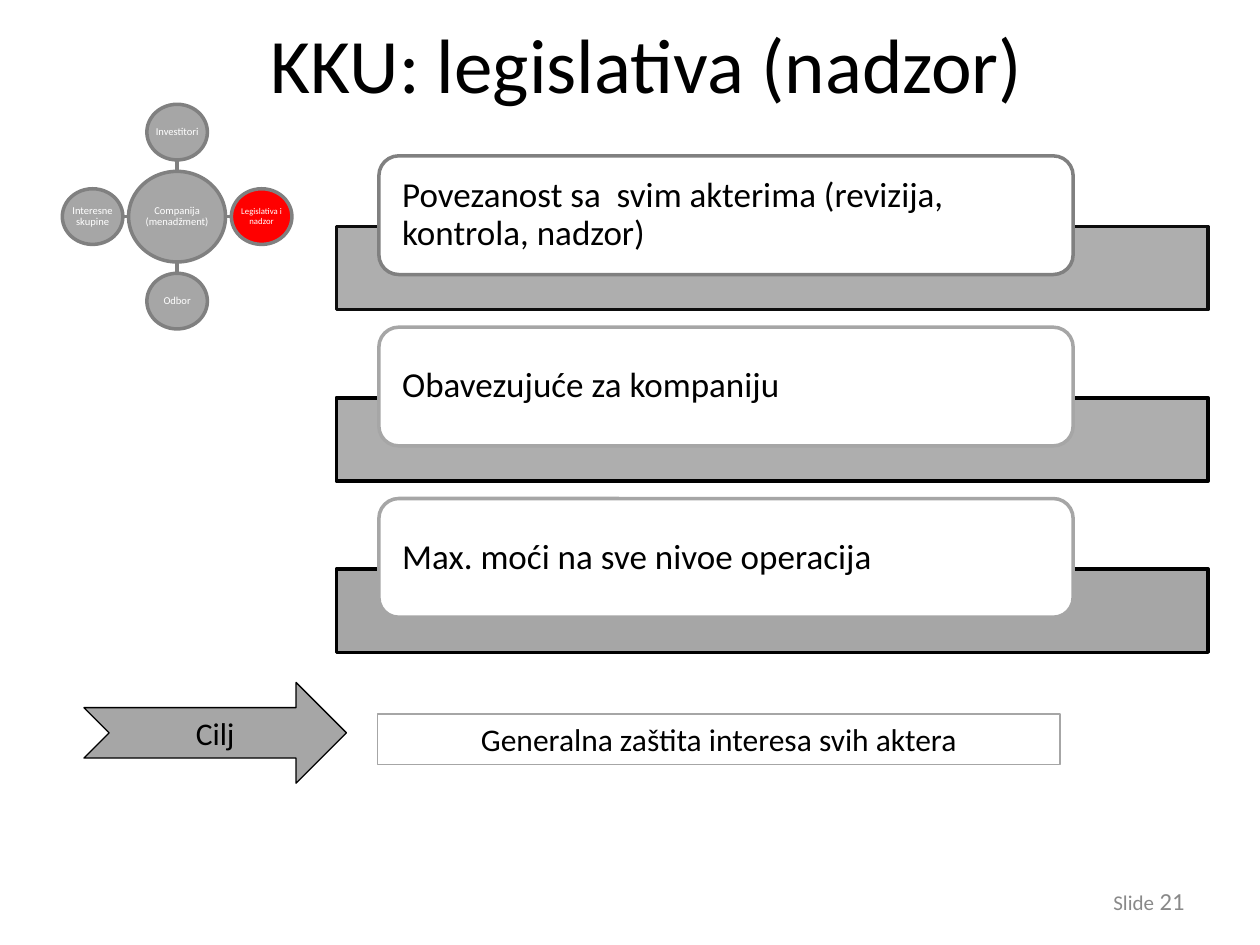
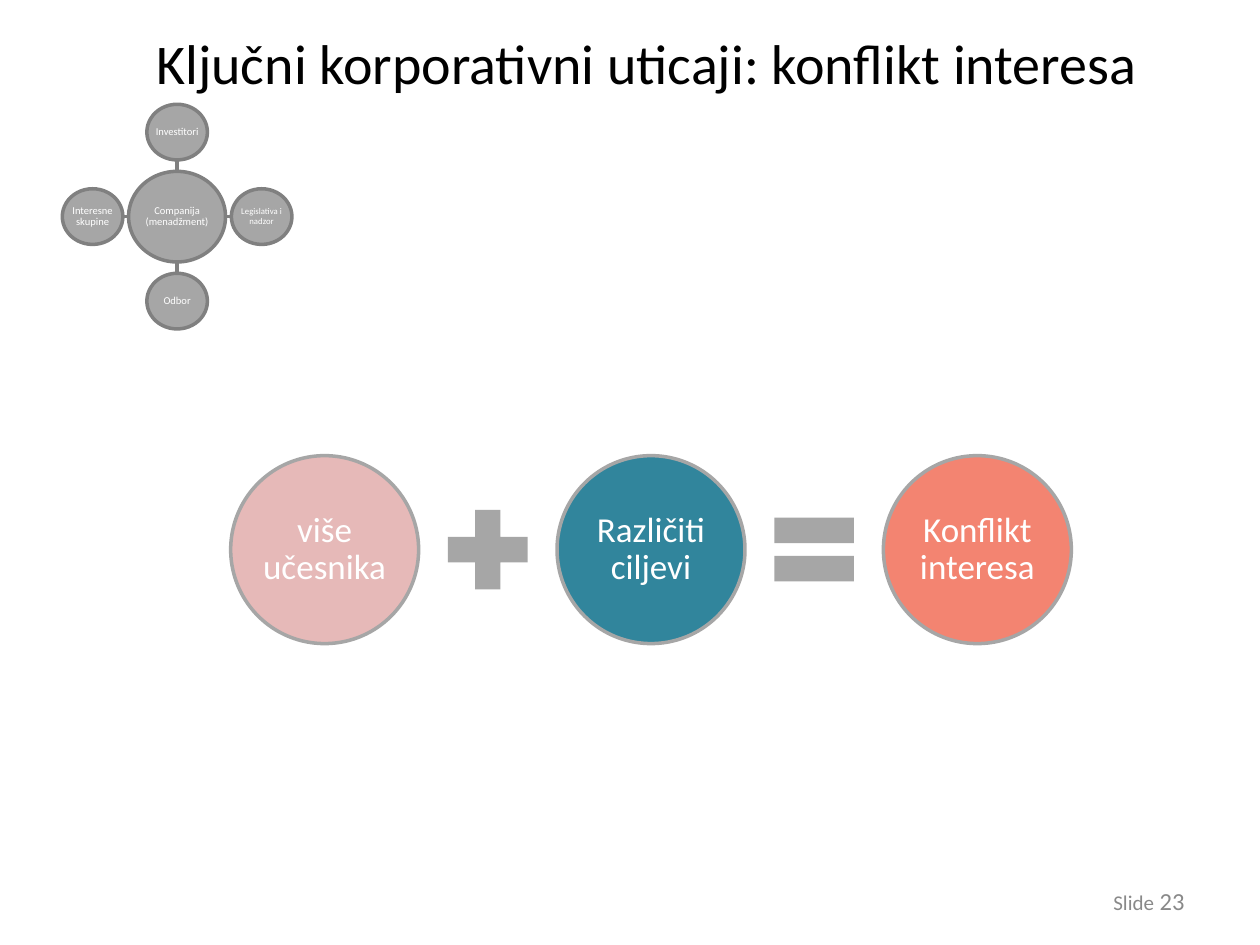
from dataclasses import dataclass
from typing import Optional

import pptx
import pptx.dml.color
import pptx.enum.shapes
import pptx.enum.text
import pptx.oxml.ns
import pptx.util
from lxml import etree

Pt = pptx.util.Pt
RGBColor = pptx.dml.color.RGBColor
Preset = pptx.enum.shapes.MSO_SHAPE
Align = pptx.enum.text.PP_ALIGN
Anchor = pptx.enum.text.MSO_ANCHOR
qn = pptx.oxml.ns.qn

FONT = "Calibri"
BLACK = RGBColor(0x00, 0x00, 0x00)
NEAR_BLACK = RGBColor(0x0D, 0x0D, 0x0D)
WHITE = RGBColor(0xFF, 0xFF, 0xFF)
GREY = RGBColor(0xA6, 0xA6, 0xA6)
DARK_GREY = RGBColor(0x80, 0x80, 0x80)
FOOTER_GREY = RGBColor(0x89, 0x89, 0x89)
RED = RGBColor(0xFF, 0x00, 0x00)
PINK = RGBColor(0xE6, 0xB9, 0xB8)
TEAL = RGBColor(0x31, 0x85, 0x9C)
CORAL = RGBColor(0xF3, 0x84, 0x71)


@dataclass(frozen=True)
class Area:
    left: float
    top: float
    width: float
    height: float

    def lengths(self) -> list:
        return [Pt(value) for value in (self.left, self.top, self.width, self.height)]


@dataclass(frozen=True)
class TextStyle:
    size: float
    color: RGBColor = BLACK
    align: Align = Align.CENTER
    line_spacing: float = 1.0
    side_inset: float = 0


@dataclass(frozen=True)
class Stakeholder:
    name: str
    step_x: int
    step_y: int
    size: float = 6


@dataclass(frozen=True)
class Statement:
    text: str
    bar_line: RGBColor
    card_line: RGBColor
    bar_opacity: int


@dataclass(frozen=True)
class Term:
    text: str
    fill: RGBColor


TITLE_AREA = Area(19.4, 0, 700.6, 71.3)
FOOTER_AREA = Area(516.2, 500.4, 167.8, 28.8)

HUB_X, HUB_Y = 101.2, 123.8
HUB_WIDTH, HUB_HEIGHT = 55.4, 51.8
NODE_WIDTH, NODE_HEIGHT = 34.6, 31.8
NODE_DISTANCE = 48.3
STAKEHOLDERS = [
    Stakeholder("Investitori", 0, -1),
    Stakeholder("Legislativa i nadzor", 1, 0, size=5),
    Stakeholder("Odbor", 0, 1),
    Stakeholder("Interesne skupine", -1, 0),
]

FIRST_BAR = Area(192.2, 129.4, 498.2, 47.6)
FIRST_CARD = Area(216.5, 89.1, 396.7, 67.8)
STATEMENT_PITCH = 97.9
STATEMENTS = [
    Statement("Povezanost sa  svim akterima (revizija, kontrola, nadzor)", NEAR_BLACK, DARK_GREY, 90),
    Statement("Obavezujuće za kompaniju", BLACK, GREY, 90),
    Statement("Max. moći na sve nivoe operacija", BLACK, GREY, 100),
]

FIRST_TERM = Area(131.8, 260.4, 107.4, 107.4)
TERM_PITCH = 186.5
OPERATOR_SIZE = 61.9
TERMS = [
    Term("više učesnika", PINK),
    Term("Različiti ciljevi", TEAL),
    Term("Konflikt interesa", CORAL),
]
OPERATORS = [Preset.MATH_PLUS, Preset.MATH_EQUAL]


def style_run(span, size: float, color: RGBColor) -> None:
    span.font.name = FONT
    span.font.size = Pt(size)
    span.font.color.rgb = color


def write_text(box, text: str, style: TextStyle) -> None:
    """Centre the text vertically; a single word never breaks."""
    frame = box.text_frame
    frame.text = text
    frame.word_wrap = " " in text
    frame.vertical_anchor = Anchor.MIDDLE
    frame.margin_left = frame.margin_right = Pt(style.side_inset)
    frame.margin_top = frame.margin_bottom = Pt(0)
    para = frame.paragraphs[0]
    para.alignment = style.align
    para.line_spacing = style.line_spacing
    for span in para.runs:
        style_run(span, style.size, style.color)


def add_box(page, preset: Preset, area: Area, fill: Optional[RGBColor] = None,
            line: Optional[RGBColor] = None, line_width: float = 2, opacity: int = 100):
    box = page.shapes.add_shape(preset, *area.lengths())
    box.shadow.inherit = False
    if fill is None:
        box.fill.background()
    else:
        box.fill.solid()
        box.fill.fore_color.rgb = fill
    if opacity < 100:
        color = box.fill._xPr.find(qn("a:solidFill"))[0]
        etree.SubElement(color, qn("a:alpha"), val=str(opacity * 1000))
    if line is None:
        box.line.fill.background()
    else:
        box.line.color.rgb = line
        box.line.width = Pt(line_width)
    return box


def add_spoke(page, start: tuple[float, float], end: tuple[float, float]) -> None:
    spoke = page.shapes.add_connector(
        pptx.enum.shapes.MSO_CONNECTOR.STRAIGHT, *(Pt(value) for value in start + end))
    spoke.line.color.rgb = DARK_GREY
    spoke.line.width = Pt(2)
    etree.SubElement(spoke._element.spPr, qn("a:effectLst"))


def add_title(page, text: str, size: float) -> None:
    box = page.shapes.add_textbox(*TITLE_AREA.lengths())
    write_text(box, text, TextStyle(size, side_inset=7.2))


def add_footer(page, number: int) -> None:
    box = page.shapes.add_textbox(*FOOTER_AREA.lengths())
    write_text(box, "Slide", TextStyle(12, FOOTER_GREY, Align.RIGHT, side_inset=7.2))
    box.text_frame.word_wrap = True
    span = box.text_frame.paragraphs[0].add_run()
    span.text = f" {number}"
    style_run(span, 14, FOOTER_GREY)


def add_bubble(page, text: str, center: tuple[float, float], width: float, height: float,
               fill: RGBColor, size: float) -> None:
    area = Area(center[0] - width / 2, center[1] - height / 2, width, height)
    bubble = add_box(page, Preset.OVAL, area, fill, DARK_GREY)
    write_text(bubble, text, TextStyle(size, WHITE, line_spacing=0.9))


def add_stakeholder_map(page, highlighted: str = "") -> None:
    """Draw the company with its four stakeholders, one of them optionally red."""
    add_bubble(page, "Companija (menadžment)", (HUB_X, HUB_Y), HUB_WIDTH, HUB_HEIGHT, GREY, 6)
    for node in STAKEHOLDERS:
        center = (HUB_X + node.step_x * NODE_DISTANCE, HUB_Y + node.step_y * NODE_DISTANCE)
        hub_edge = (HUB_X + node.step_x * HUB_WIDTH / 2, HUB_Y + node.step_y * HUB_HEIGHT / 2)
        node_edge = (center[0] - node.step_x * NODE_WIDTH / 2,
                     center[1] - node.step_y * NODE_HEIGHT / 2)
        add_spoke(page, hub_edge, node_edge)
        fill = RED if node.name == highlighted else GREY
        add_bubble(page, node.name, center, NODE_WIDTH, NODE_HEIGHT, fill, node.size)


def add_statements(page) -> None:
    card_style = TextStyle(20, align=Align.LEFT, line_spacing=0.9, side_inset=10)
    for index, statement in enumerate(STATEMENTS):
        bar, card = (
            Area(first.left, first.top + index * STATEMENT_PITCH, first.width, first.height)
            for first in (FIRST_BAR, FIRST_CARD))
        add_box(page, Preset.RECTANGLE, bar, GREY, statement.bar_line,
                opacity=statement.bar_opacity)
        card_box = add_box(page, Preset.ROUNDED_RECTANGLE, card, WHITE, statement.card_line)
        write_text(card_box, statement.text, card_style)


def add_goal(page) -> None:
    arrow = add_box(page, Preset.NOTCHED_RIGHT_ARROW, Area(48, 390, 150, 57.6), GREY, BLACK, 0.75)
    write_text(arrow, "Cilj", TextStyle(18))
    goal = add_box(page, Preset.RECTANGLE, Area(215.8, 408, 390, 29), line=GREY, line_width=0.75)
    write_text(goal, "Generalna zaštita interesa svih aktera", TextStyle(18))


def add_equation(page) -> None:
    diameter = FIRST_TERM.width
    for index, term in enumerate(TERMS):
        left = FIRST_TERM.left + index * TERM_PITCH
        circle = add_box(page, Preset.OVAL, Area(left, FIRST_TERM.top, diameter, diameter),
                         term.fill, GREY)
        write_text(circle, term.text, TextStyle(20, WHITE, line_spacing=0.9))
    for index, operator in enumerate(OPERATORS):
        middle = FIRST_TERM.left + (diameter + TERM_PITCH) / 2 + index * TERM_PITCH
        top = FIRST_TERM.top + (diameter - OPERATOR_SIZE) / 2
        area = Area(middle - OPERATOR_SIZE / 2, top, OPERATOR_SIZE, OPERATOR_SIZE)
        add_box(page, operator, area, GREY)


def add_page(deck, title: str, title_size: float, number: int):
    page = deck.slides.add_slide(deck.slide_layouts[6])
    add_footer(page, number)
    add_title(page, title, title_size)
    return page


def main() -> None:
    deck = pptx.Presentation()
    deck.slide_width, deck.slide_height = Pt(720), Pt(540)

    oversight = add_page(deck, "KKU: legislativa (nadzor)", 44, 21)
    add_statements(oversight)
    add_goal(oversight)
    add_stakeholder_map(oversight, highlighted="Legislativa i nadzor")

    conflict = add_page(deck, "Ključni korporativni uticaji: konflikt interesa", 32, 23)
    add_equation(conflict)
    add_stakeholder_map(conflict)

    deck.save("out.pptx")


if __name__ == "__main__":
    main()
